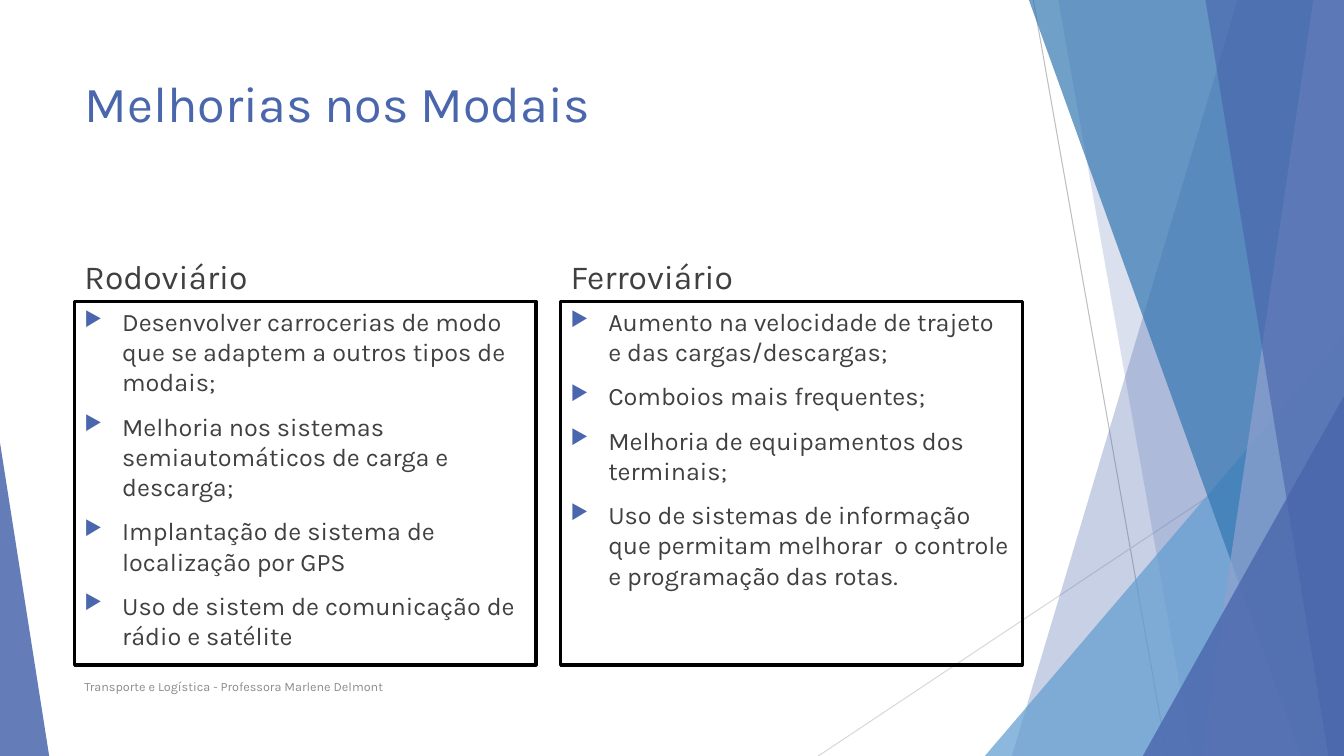
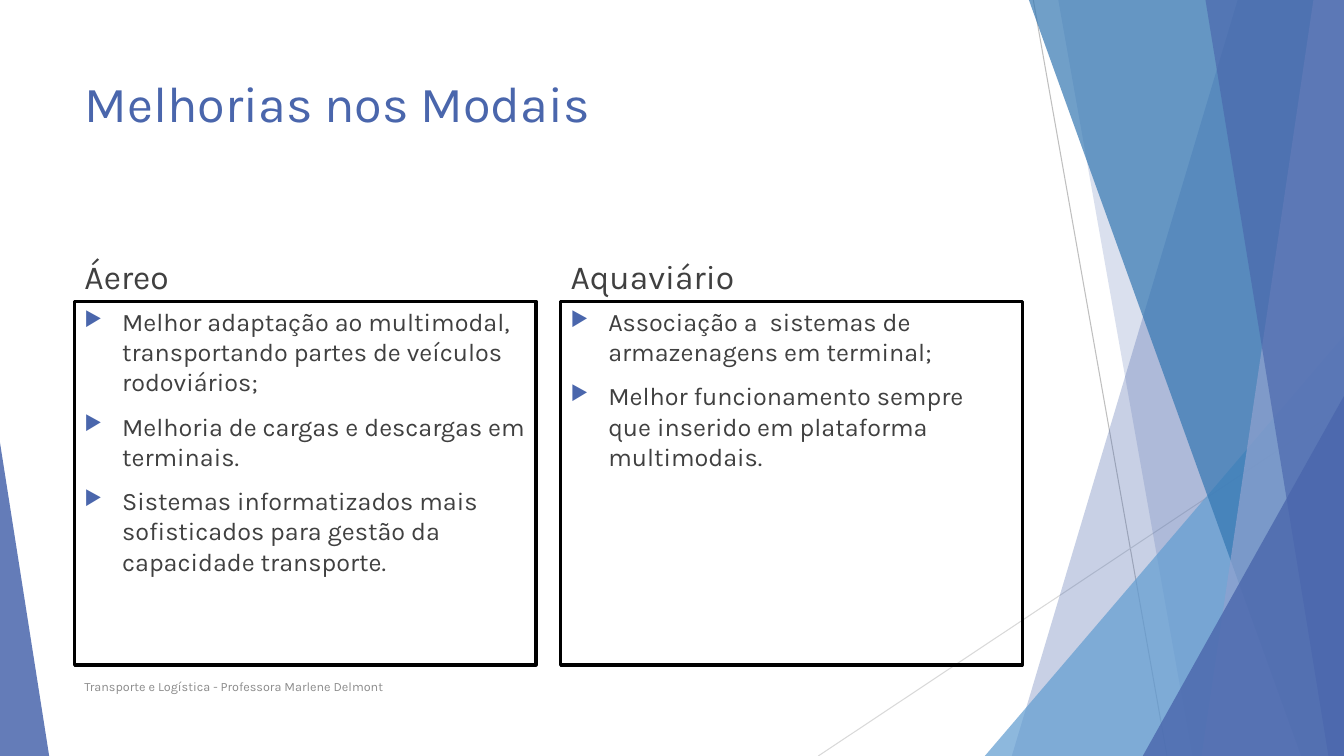
import pptx
from pptx.dml.color import RGBColor
from pptx.enum.shapes import MSO_CONNECTOR, MSO_SHAPE
from pptx.enum.text import MSO_ANCHOR, MSO_AUTO_SIZE, PP_ALIGN
from pptx.oxml.ns import qn
from pptx.oxml.xmlchemy import OxmlElement
from pptx.util import Cm, Pt

TITLE = "Melhorias nos Modais"
FOOTER = "Transporte e Logística - Professora Marlene Delmont"
SLIDES = [
    [
        ("Rodoviário", [
            "Desenvolver carrocerias de modo que se adaptem a outros tipos de modais;",
            "Melhoria nos sistemas semiautomáticos de carga e descarga;",
            "Implantação de sistema de localização por GPS",
            "Uso de sistem de comunicação de rádio e satélite",
        ]),
        ("Ferroviário", [
            "Aumento na velocidade de trajeto e das cargas/descargas;",
            "Comboios mais frequentes;",
            "Melhoria de equipamentos dos terminais;",
            "Uso de sistemas de informação que permitam melhorar  o controle e programação das rotas.",
        ]),
    ],
    [
        ("Áereo", [
            "Melhor adaptação ao multimodal, transportando partes de veículos rodoviários;",
            "Melhoria de cargas e descargas em terminais.",
            "Sistemas informatizados mais sofisticados para gestão da capacidade transporte.",
        ]),
        ("Aquaviário", [
            "Associação a  sistemas de armazenagens em terminal;",
            "Melhor funcionamento sempre que inserido em plataforma multimodais.",
        ]),
    ],
]

FONT = "Karla"
COLORS = {
    "accent": "4A66AC", "sky": "629DD1", "ocean": "3477B2", "mist": "90A2CF",
    "text": "404040", "footer": "8C8C8C", "frame": "000000",
    "gray": "BFBFBF", "pale": "D9D9D9",
}

# All lengths in centimetres
WIDTH, HEIGHT = 33.87, 19.05
LEFT, CONTENT_WIDTH, COLUMN_WIDTH = 1.88, 23.88, 11.63
HEADING_TOP, HEADING_HEIGHT = 5.99, 1.6
LIST_HEIGHT = 9.17
BULLET_INDENT = 0.95

# x1, y1, x2, y2, color
RAYS = [
    (26.04, 0, 29.41, HEIGHT, "gray"),
    (WIDTH, 10.24, 20.62, HEIGHT, "pale"),
]
# Back to front. A band gives its left edge at the top and at the bottom and
# reaches the right edge; a triangle gives left, top, width and apex position.
FACETS = [
    ("band", (31.19, 25.5), "accent", 30),
    ("band", (26.67, 30.05), "accent", 20),
    ("triangle", (24.82, 8.46, 9.05, 1), "sky", 72),
    ("band", (25.93, 32.79), "ocean", 70),
    ("band", (33.1, 30.28), "mist", 70),
    ("band", (30.38, 33.48), "accent", 65),
    ("triangle", (28.8, 9.98, 5.07, 1), "accent", 80),
    ("triangle", (0, 11.15, 1.24, 0), "accent", 85),
]


def rgb(name):
    return RGBColor.from_string(COLORS[name])


def add_child(parent, tag, **attributes):
    child = OxmlElement(tag)
    for name, value in attributes.items():
        child.set(name, str(value))
    parent.append(child)
    return child


def add_ray(shapes, x1, y1, x2, y2, color):
    ray = shapes.add_connector(MSO_CONNECTOR.STRAIGHT, Cm(x1), Cm(y1), Cm(x2), Cm(y2))
    ray.line.color.rgb = rgb(color)
    ray.line.width = Pt(0.75)
    add_child(ray.element.spPr, "a:effectLst")


def add_facet(shapes, kind, geometry, color, opacity):
    if kind == "band":
        top_x, bottom_x = geometry
        builder = shapes.build_freeform(Cm(top_x), 0)
        corners = [(WIDTH, 0), (WIDTH, HEIGHT), (bottom_x, HEIGHT)]
        builder.add_line_segments([(Cm(x), Cm(y)) for x, y in corners], close=True)
        facet = builder.convert_to_shape()
    else:
        left, top, width, apex = geometry
        facet = shapes.add_shape(MSO_SHAPE.ISOSCELES_TRIANGLE,
                                 Cm(left), Cm(top), Cm(width), Cm(HEIGHT - top))
        facet.adjustments[0] = apex
    facet.shadow.inherit = False
    facet.fill.solid()
    facet.fill.fore_color.rgb = rgb(color)
    shade = next(facet.element.spPr.iter(qn("a:srgbClr")))
    add_child(shade, "a:alpha", val=opacity * 1000)
    facet.line.fill.background()


def decorate_layout(layout, page):
    """Build the facets on a page, then move them behind the layout's content."""
    group = page.shapes.add_group_shape()
    for ray in RAYS:
        add_ray(group.shapes, *ray)
    for facet in FACETS:
        add_facet(group.shapes, *facet)
    for number, node in enumerate(group.element.iter(qn("p:cNvPr")), 100):
        node.set("id", str(number))
    layout.element.cSld.spTree.insert(2, group.element)


def add_bullet(para):
    properties = para._p.get_or_add_pPr()
    properties.set("marL", str(Cm(BULLET_INDENT)))
    properties.set("indent", str(-Cm(BULLET_INDENT)))
    add_child(add_child(properties, "a:buClr"), "a:srgbClr", val=COLORS["accent"])
    add_child(properties, "a:buSzPct", val=80000)
    add_child(properties, "a:buChar", char="▶")


def write(box, texts, *, size, color, anchor=MSO_ANCHOR.TOP, before=0, bullets=False):
    frame = box.text_frame
    frame.word_wrap = True
    frame.auto_size = MSO_AUTO_SIZE.NONE
    frame.vertical_anchor = anchor
    for index, text in enumerate(texts):
        para = frame.paragraphs[0] if index == 0 else frame.add_paragraph()
        para.alignment = PP_ALIGN.LEFT
        para.space_before = Pt(before)
        if bullets:
            add_bullet(para)
        span = para.add_run()
        span.text = text
        span.font.name = FONT
        span.font.size = Pt(size)
        span.font.color.rgb = rgb(color)


def add_box(page, left, top, width, height):
    return page.shapes.add_textbox(Cm(left), Cm(top), Cm(width), Cm(height))


def add_column(page, left, heading, items):
    box = add_box(page, left, HEADING_TOP, COLUMN_WIDTH, HEADING_HEIGHT)
    write(box, [heading], size=24, color="text", anchor=MSO_ANCHOR.BOTTOM, before=10)
    box = add_box(page, left, HEADING_TOP + HEADING_HEIGHT, COLUMN_WIDTH, LIST_HEIGHT)
    box.line.color.rgb = rgb("frame")
    box.line.width = Pt(2.25)
    write(box, items, size=18, color="text", before=10, bullets=True)


def fill_page(page, columns):
    title = page.shapes.title
    title.left, title.top = Cm(LEFT), Cm(1.7)
    title.width, title.height = Cm(CONTENT_WIDTH), Cm(3.66)
    write(title, [TITLE], size=36, color="accent")
    step = CONTENT_WIDTH - COLUMN_WIDTH
    for index, (heading, items) in enumerate(columns):
        add_column(page, LEFT + index * step, heading, items)
    footer = add_box(page, LEFT, 16.79, 17.5, 1.02)
    write(footer, [FOOTER], size=9, color="footer", anchor=MSO_ANCHOR.MIDDLE)


def main():
    deck = pptx.Presentation()
    deck.slide_width, deck.slide_height = Cm(WIDTH), Cm(HEIGHT)
    layout = deck.slide_layouts.get_by_name("Title Only")
    pages = [deck.slides.add_slide(layout) for _ in SLIDES]
    decorate_layout(layout, pages[0])
    for page, columns in zip(pages, SLIDES):
        fill_page(page, columns)
    deck.save("out.pptx")


if __name__ == "__main__":
    main()
